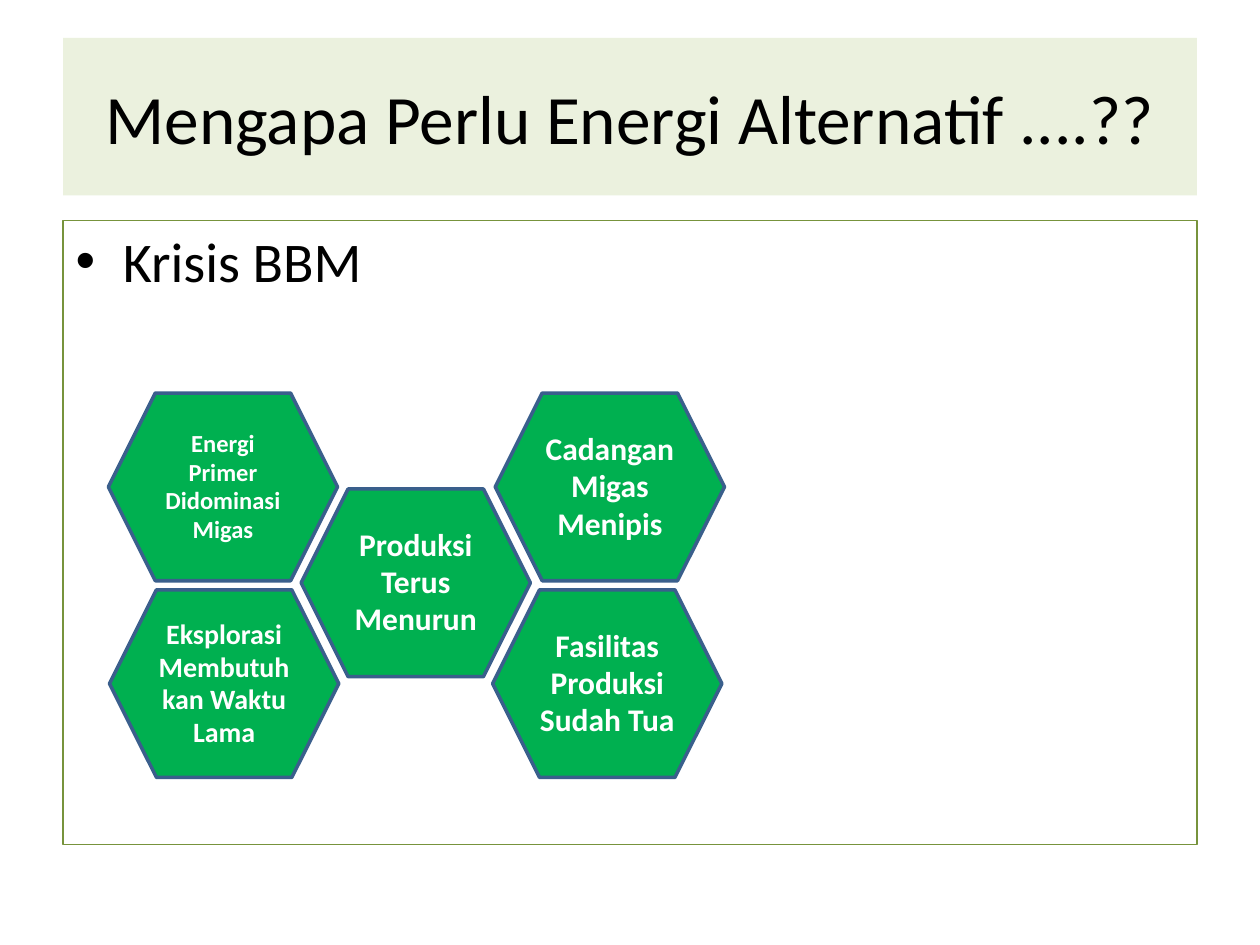
from pptx import Presentation
from pptx.dml.color import RGBColor
from pptx.enum.shapes import MSO_SHAPE
from pptx.enum.text import MSO_ANCHOR, PP_ALIGN
from pptx.util import Pt

HEXAGON = MSO_SHAPE.HEXAGON
MIDDLE = MSO_ANCHOR.MIDDLE
CENTER = PP_ALIGN.CENTER

BLACK = RGBColor(0x00, 0x00, 0x00)
WHITE = RGBColor(0xFF, 0xFF, 0xFF)
PALE_GREEN = RGBColor(0xEB, 0xF1, 0xDE)
OLIVE = RGBColor(0x77, 0x93, 0x3C)
GREEN = RGBColor(0x00, 0xB0, 0x50)
BLUE = RGBColor(0x3A, 0x5F, 0x8C)

HEXAGON_WIDTH, HEXAGON_HEIGHT = 131, 107.3
TOP_ROW, MIDDLE_ROW, BOTTOM_ROW = 224.6, 279.4, 337
CRISIS_CAUSES = [
    ("Energi Primer Didominasi Migas", 61.9, TOP_ROW, 14),
    ("Produksi Terus Menurun", 172.1, MIDDLE_ROW, 18),
    ("Eksplorasi Membutuhkan Waktu Lama", 62.6, BOTTOM_ROW, 16),
    ("Cadangan Migas Menipis", 283, TOP_ROW, 18),
    ("Fasilitas Produksi Sudah Tua", 281.5, BOTTOM_ROW, 18),
]


class SlideBuilder:
    font_name = "Calibri"

    def __init__(self, page):
        self.page = page
        self.group = page.shapes.add_group_shape()

    def place(self, box, left, top, width, height):
        frame = {"left": left, "top": top, "width": width, "height": height}
        for name, value in frame.items():
            setattr(box, name, Pt(value))

    def add_text(self, box, text, size, color, bold=False):
        para = box.text_frame.paragraphs[0]
        span = para.add_run()
        span.text = text
        style = {"name": self.font_name, "size": Pt(size), "bold": bold}
        for name, value in style.items():
            setattr(span.font, name, value)
        span.font.color.rgb = color
        return para

    def paint(self, box, fill):
        box.fill.solid()
        box.fill.fore_color.rgb = fill

    def outline(self, box, color, width):
        box.line.color.rgb = color
        box.line.width = Pt(width)

    def title(self, text):
        box = self.page.shapes.title
        self.place(box, 36, 21.6, 648, 90)
        self.paint(box, PALE_GREEN)
        box.text_frame.vertical_anchor = MIDDLE
        self.add_text(box, text, 39.6, BLACK).alignment = CENTER

    def body(self, text):
        box = self.page.placeholders[1]
        self.place(box, 36, 126, 648, 356.4)
        self.outline(box, OLIVE, 0.75)
        self.add_text(box, text, 32, BLACK)

    def hexagon(self, text, left, top, size):
        box = self.group.shapes.add_shape(
            HEXAGON, Pt(left), Pt(top), Pt(HEXAGON_WIDTH), Pt(HEXAGON_HEIGHT)
        )
        box.shadow.inherit = False
        self.paint(box, GREEN)
        self.outline(box, BLUE, 2)
        layout = {
            "word_wrap": True,
            "vertical_anchor": MIDDLE,
            "margin_left": Pt(6.8),
            "margin_right": Pt(6.8),
        }
        for name, value in layout.items():
            setattr(box.text_frame, name, value)
        para = self.add_text(box, text, size, WHITE, bold=True)
        para.alignment = CENTER
        para.line_spacing = 0.98


def main():
    deck = Presentation()
    deck.slide_width, deck.slide_height = Pt(720), Pt(540)
    builder = SlideBuilder(deck.slides.add_slide(deck.slide_layouts[1]))
    builder.title("Mengapa Perlu Energi Alternatif ....??")
    builder.body("Krisis BBM")
    for cause in CRISIS_CAUSES:
        builder.hexagon(*cause)
    deck.save("out.pptx")


if __name__ == "__main__":
    main()
